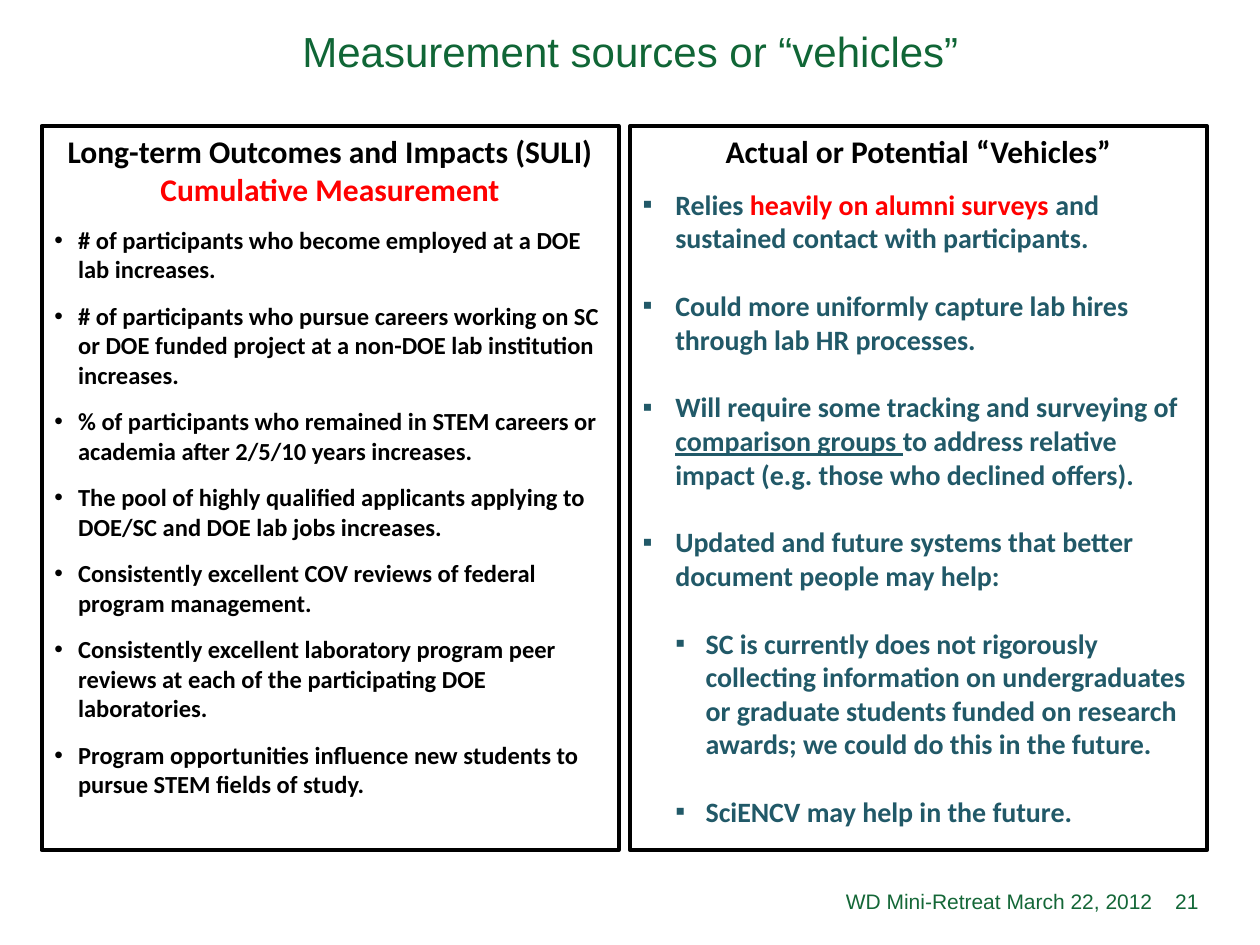
"""Build the slide on measurement sources or "vehicles"."""
import pptx
import pptx.dml.color
import pptx.enum.text
import pptx.util
from lxml import etree

Cm = pptx.util.Cm
Pt = pptx.util.Pt
ALIGN = pptx.enum.text.PP_ALIGN
ANCHOR = pptx.enum.text.MSO_ANCHOR
GREEN, FOOTER_GREEN = "106636", "146737"
BLACK, RED, TEAL = "000000", "FF0000", "215968"

OUTCOMES = [
    "# of participants who become employed at a DOE lab increases.",
    "# of participants who pursue careers working on SC or DOE funded project "
    "at a non-DOE lab institution increases.",
    "% of participants who remained in STEM careers or academia after 2/5/10 years increases.",
    "The pool of highly qualified applicants applying to DOE/SC and DOE lab jobs increases.",
    "Consistently excellent COV reviews of federal program management.",
    "Consistently excellent laboratory program peer reviews at each of the "
    "participating DOE laboratories.",
    "Program opportunities influence new students to pursue STEM fields of study.",
]
VEHICLES = [
    (0, [("Relies ", {}), ("heavily on alumni surveys ", {"color": RED}),
         ("and sustained contact with participants.", {})]),
    (0, [("Could more uniformly capture lab hires through lab HR processes.", {})]),
    (0, [("Will require some tracking and surveying of ", {}),
         ("comparison groups ", {"underline": True}),
         ("to address relative impact (e.g. those who declined offers).", {})]),
    (0, [("Updated and future systems that better document people may help:", {})]),
    (1, [("SC is currently does not rigorously collecting information on undergraduates "
          "or graduate students funded on research awards; we could do this in the future.", {})]),
    (1, [("SciENCV may help in the future.", {})]),
]


def rgb(value):
    return pptx.dml.color.RGBColor.from_string(value)


class Deck:
    """Hold the style and the current slide."""

    heading = {"name": "Calibri", "size": Pt(18), "bold": True, "color": BLACK}
    outcome = {**heading, "size": Pt(14)}
    vehicle = {**heading, "size": Pt(16), "color": TEAL}
    label = {"name": "Arial", "size": Pt(12), "color": GREEN}

    def __init__(self):
        self.prs = pptx.Presentation()
        self.prs.slide_width, self.prs.slide_height = Cm(25.4), Cm(19.05)
        self.s = self.prs.slides.add_slide(self.prs.slide_layouts[3])

    def place(self, sp, left, top, width, height, anchor):
        box = {"left": left, "top": top, "width": width, "height": height}
        for key, value in box.items():
            setattr(sp, key, Cm(value))
        tf = sp.text_frame
        frame = {"word_wrap": True, "vertical_anchor": anchor,
                 "auto_size": pptx.enum.text.MSO_AUTO_SIZE.NONE}
        for key, value in frame.items():
            setattr(tf, key, value)
        return tf

    def runs(self, p, parts, style):
        for text, extra in parts:
            r = p.add_run()
            r.text = text
            for key, value in {**style, **extra}.items():
                if key == "color":
                    r.font.color.rgb = rgb(value)
                else:
                    setattr(r.font, key, value)

    def paragraph(self, tf, parts, style, first=False, bullet=None, indent=(0, 0), **fmt):
        p = tf.paragraphs[0] if first else tf.add_paragraph()
        pPr = p._p.get_or_add_pPr()
        pPr.set("marL", str(Cm(indent[0])))
        pPr.set("indent", str(Cm(-indent[1])))
        ns = pptx.oxml.ns.qn
        if bullet:
            etree.SubElement(pPr, ns("a:buChar")).set("char", bullet)
        else:
            etree.SubElement(pPr, ns("a:buNone"))
        for key, value in {"space_before": Pt(0), **fmt}.items():
            setattr(p, key, value)
        self.runs(p, parts, style)

    def title(self, text):
        tf = self.place(self.s.shapes.title, 0.64, 0.13, 24.13, 1.9, ANCHOR.MIDDLE)
        self.paragraph(tf, [(text, {})], {**self.label, "size": Pt(24)}, first=True,
                       alignment=ALIGN.CENTER, line_spacing=0.9)

    def panel(self, idx, left, headings):
        sp = self.s.placeholders[idx]
        tf = self.place(sp, left, 2.54, 11.63, 14.6, ANCHOR.TOP)
        sp.line.color.rgb = rgb(BLACK)
        sp.line.width = Pt(2.25)
        for i, (text, color) in enumerate(headings):
            self.paragraph(tf, [(text, {"color": color})], self.heading,
                           first=i == 0, alignment=ALIGN.CENTER)
        return tf

    def footer(self, text, left, width, alignment, color):
        sp = self.s.shapes.add_textbox(0, 0, 0, 0)
        tf = self.place(sp, left, 17.65, width, 1.02, ANCHOR.MIDDLE)
        self.paragraph(tf, [(text, {"color": color})], self.label, first=True,
                       alignment=alignment)


def main():
    deck = Deck()
    deck.title("Measurement sources or “vehicles”")

    tf = deck.panel(1, 0.84, [("Long-term Outcomes and Impacts (SULI)", BLACK),
                              ("Cumulative Measurement", RED)])
    for text in OUTCOMES:
        deck.paragraph(tf, [(text, {})], deck.outcome, bullet="•", indent=(0.48, 0.48),
                       space_before=Pt(9.8))

    tf = deck.panel(2, 12.7, [("Actual or Potential “Vehicles”", BLACK)])
    for i, (level, parts) in enumerate(VEHICLES):
        deck.paragraph(tf, parts, deck.vehicle, bullet="▪", level=level,
                       indent=(1.27, 0.61) if level else (0.66, 0.66),
                       space_before=Pt(19.5 if i else 9.8))

    deck.footer("WD Mini-Retreat March 22, 2012", 8.89, 14.6, ALIGN.RIGHT, FOOTER_GREEN)
    deck.footer("21", 23.29, 1.27, ALIGN.CENTER, GREEN)
    deck.prs.save("out.pptx")


if __name__ == "__main__":
    main()
